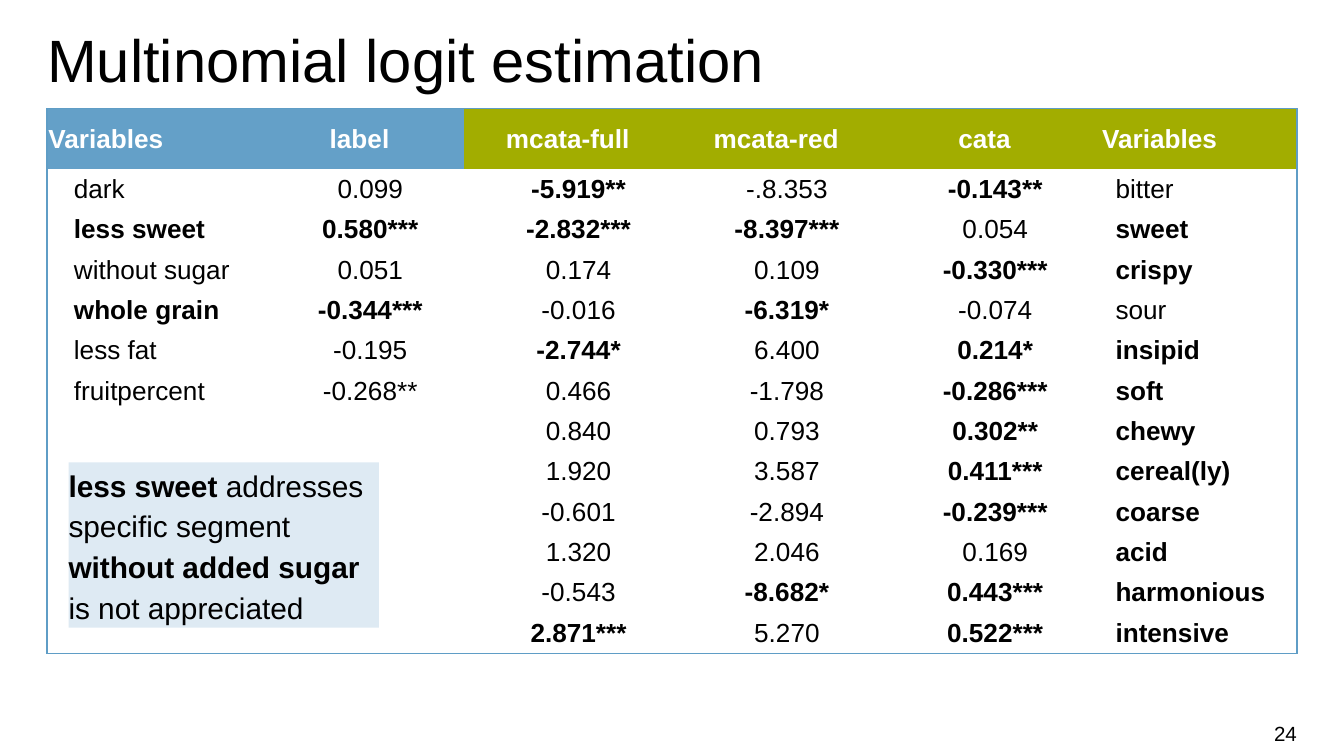
import lxml.etree
import pptx
import pptx.dml.color
import pptx.enum.shapes
import pptx.enum.text
import pptx.oxml.ns
import pptx.util

Inches = pptx.util.Inches
Pt = pptx.util.Pt
Align = pptx.enum.text.PP_ALIGN
Anchor = pptx.enum.text.MSO_ANCHOR
qn = pptx.oxml.ns.qn

BLACK, WHITE = "000000", "FFFFFF"
BLUE, GREEN, BORDER = "64A0C8", "A2AD00", "5F9DC6"
NO_STYLE_NO_GRID = "{2D5ABB26-0587-4C30-8999-92F81FD0307C}"

HEADERS = ["Variables", "label", "mcata-full", "mcata-red", "cata", "Variables"]
# A leading # marks a bold entry.
ESTIMATES = [
    ["dark", "0.099", "#-5.919**", "-.8.353", "#-0.143**", "bitter"],
    ["#less sweet", "#0.580***", "#-2.832***", "#-8.397***", "0.054", "#sweet"],
    ["without sugar", "0.051", "0.174", "0.109", "#-0.330***", "#crispy"],
    ["#whole grain", "#-0.344***", "-0.016", "#-6.319*", "-0.074", "sour"],
    ["less fat", "-0.195", "#-2.744*", "6.400", "#0.214*", "#insipid"],
    ["fruitpercent", "-0.268**", "0.466", "-1.798", "#-0.286***", "#soft"],
    ["", "", "0.840", "0.793", "#0.302**", "#chewy"],
    ["", "", "1.920", "3.587", "#0.411***", "#cereal(ly)"],
    ["", "", "-0.601", "-2.894", "#-0.239***", "#coarse"],
    ["", "", "1.320", "2.046", "0.169", "#acid"],
    ["", "", "-0.543", "#-8.682*", "#0.443***", "#harmonious"],
    ["", "", "#2.871***", "5.270", "#0.522***", "#intensive"],
]
FINDINGS = [
    [("less sweet ", True), ("addresses specific segment", False)],
    [("without added sugar ", True), ("is not appreciated", False)],
]


def rgb(code):
    return pptx.dml.color.RGBColor.from_string(code)


class SlideBuilder:
    font = "Arial"

    def __init__(self, slide):
        self.slide = slide

    def span(self, para, text, size, color=BLACK, bold=False):
        run = para.add_run()
        run.text = text
        run.font.name = self.font
        run.font.size = Pt(size)
        run.font.bold = bold
        run.font.color.rgb = rgb(color)

    def paragraphs(self, frame, paragraphs, size, align=Align.LEFT, spacing=None):
        """Write paragraphs given as lists of (text, bold) pairs."""
        for index, spans in enumerate(paragraphs):
            para = frame.add_paragraph() if index else frame.paragraphs[0]
            para.alignment = align
            para.line_spacing = spacing
            for text, bold in spans:
                self.span(para, text, size, bold=bold)

    def frame(self, shape, anchor=Anchor.TOP, vertical=0):
        frame = shape.text_frame
        frame.word_wrap = True
        frame.vertical_anchor = anchor
        frame.margin_left = frame.margin_right = 0
        frame.margin_top = frame.margin_bottom = Inches(vertical)
        return frame

    def text(self, place, text, size, align=Align.LEFT, spacing=None,
             anchor=Anchor.TOP, vertical=0):
        box = self.slide.shapes.add_textbox(*map(Inches, place))
        frame = self.frame(box, anchor, vertical)
        self.paragraphs(frame, [[(text, False)]], size, align, spacing)

    def panel(self, place, paragraphs, size, color, opacity, spacing):
        """Draw a translucent rectangle holding paragraphs."""
        panel = self.slide.shapes.add_shape(
            pptx.enum.shapes.MSO_SHAPE.RECTANGLE, *map(Inches, place))
        panel.shadow.inherit = False
        panel.line.fill.background()
        panel.fill.solid()
        panel.fill.fore_color.rgb = rgb(color)
        tint = panel.fill._xPr.find(".//" + qn("a:srgbClr"))
        lxml.etree.SubElement(tint, qn("a:alpha"), val=str(opacity * 1000))
        self.paragraphs(self.frame(panel), paragraphs, size, spacing=spacing)

    def borders(self, cell, sides):
        """Outline the given sides, in the order L, R, T, B."""
        properties = cell._tc.get_or_add_tcPr()
        for index, side in enumerate(sides):
            line = lxml.etree.Element(qn("a:ln" + side), w=str(Pt(0.75)))
            fill = lxml.etree.SubElement(line, qn("a:solidFill"))
            lxml.etree.SubElement(fill, qn("a:srgbClr"), val=BORDER)
            properties.insert(index, line)

    def cell(self, cell, text, size, color, margins, align, fill=None):
        cell.vertical_anchor = Anchor.MIDDLE
        (cell.margin_left, cell.margin_top,
         cell.margin_right, cell.margin_bottom) = map(Inches, margins)
        if fill:
            cell.fill.solid()
            cell.fill.fore_color.rgb = rgb(fill)
        else:
            cell.fill.background()
        para = cell.text_frame.paragraphs[0]
        para.alignment = align
        if text:
            self.span(para, text.lstrip("#"), size, color, text.startswith("#"))
        else:
            lxml.etree.SubElement(para._p, qn("a:endParaRPr"), sz=str(size * 100))

    def table(self, place, headers, body, heights, size):
        rows = [["#" + header for header in headers]] + body
        last_row, last_column = len(rows) - 1, len(headers) - 1
        table = self.slide.shapes.add_table(
            len(rows), len(headers), *map(Inches, place)).table
        table._tbl.tblPr.find(qn("a:tableStyleId")).text = NO_STYLE_NO_GRID
        table.horz_banding = False
        for column in table.columns:
            column.width = Inches(place[2] / len(headers))
        for r, (row, height) in enumerate(zip(rows, heights)):
            table.rows[r].height = Inches(height)
            for c, text in enumerate(row):
                color, fill, margins = BLACK, None, (0.2, 0.03, 0.04, 0.03)
                if r == 0:
                    color, fill = WHITE, BLUE if c < 2 else GREEN
                    margins = (0.01, 0.01, 0.01, 0)
                    if c == last_column:
                        margins = (0.1, 0.05, 0.1, 0.05)
                align = Align.LEFT if c in (0, last_column) else Align.CENTER
                cell = table.cell(r, c)
                self.cell(cell, text, size, color, margins, align, fill)
                edges = {"L": c == 0, "R": c == last_column,
                         "T": r == 0, "B": r == last_row}
                self.borders(cell, [side for side, on in edges.items() if on])


def main():
    deck = pptx.Presentation()
    deck.slide_width, deck.slide_height = Inches(10), Inches(10) * 9 // 16
    page = SlideBuilder(deck.slides.add_slide(deck.slide_layouts[6]))
    page.text((7.41, 5.31, 2.24, 0.3), "24", 11, Align.RIGHT,
              anchor=Anchor.MIDDLE, vertical=0.05)
    page.table((0.35, 0.81, 9.3, 4.05), HEADERS, ESTIMATES,
               [0.45] + [0.3] * len(ESTIMATES), 14)
    page.text((0.35, 0.26, 9.29, 0.45), "Multinomial logit estimation", 32,
              spacing=Pt(32))
    page.panel((0.51, 3.44, 2.31, 1.23), FINDINGS, 16, BLUE, 21, 1.14)
    deck.save("out.pptx")


if __name__ == "__main__":
    main()
